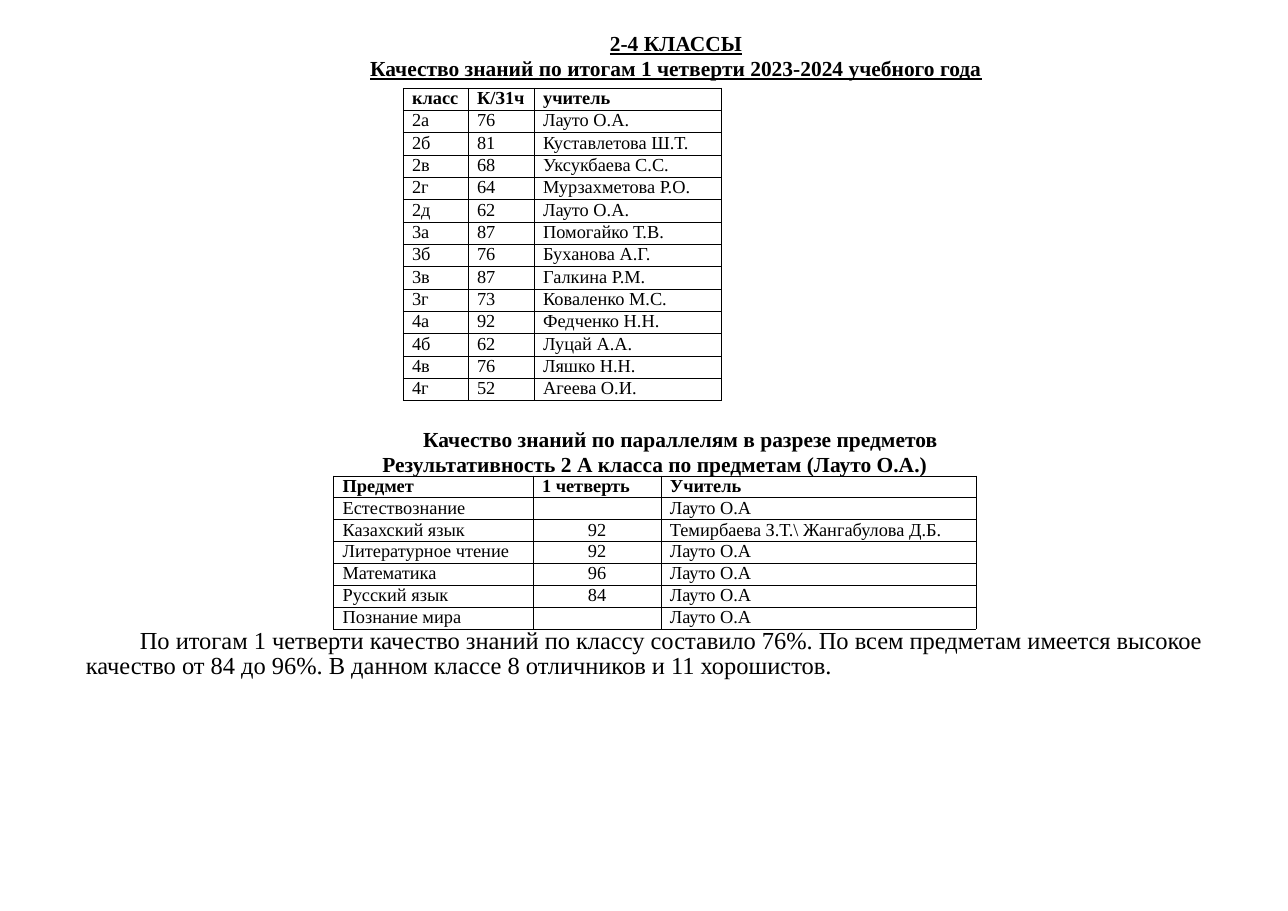
"""Build a slide with school grade quality results for classes 2-4."""
import pptx
import pptx.dml.color
import pptx.enum.text
import pptx.oxml
import pptx.oxml.ns
import pptx.util

Inches, Pt = pptx.util.Inches, pptx.util.Pt
ALIGN = pptx.enum.text.PP_ALIGN
BLACK = pptx.dml.color.RGBColor(0x00, 0x00, 0x00)
FONT = "Times New Roman"
BORDER = (
    '<a:{} {} w="6350"><a:solidFill><a:srgbClr val="{}"/></a:solidFill></a:{}>'
)


def write(p, text, size, spacing, bold=False):
    p.text = text
    p.line_spacing = Pt(spacing)
    p.font.name, p.font.size, p.font.bold = FONT, Pt(size), bold
    p.font.color.rgb = BLACK


def add_grid(s, left, top, height, widths, rows, centred=()):
    frame = s.shapes.add_table(
        len(rows), len(widths), Inches(left), Inches(top),
        Inches(sum(widths)), Inches(height))
    table = frame.table
    table.first_row = table.horz_banding = False
    for col, width in zip(table.columns, widths):
        col.width = Inches(width)
    for i, row in enumerate(rows):
        table.rows[i].height = Inches(height / len(rows))
        for j, text in enumerate(row):
            cell = table.cell(i, j)
            is_centred = i > 0 and j in centred
            cell.margin_left = Inches(0 if is_centred else 0.08)
            cell.margin_right = cell.margin_top = cell.margin_bottom = 0
            p = cell.text_frame.paragraphs[0]
            write(p, text, 12, 13.4, bold=i == 0)
            p.alignment = ALIGN.CENTER if is_centred else ALIGN.LEFT
            tcPr = cell._tc.get_or_add_tcPr()
            for side in ("lnL", "lnR", "lnT", "lnB"):
                tcPr.append(pptx.oxml.parse_xml(BORDER.format(
                    side, pptx.oxml.ns.nsdecls("a"), BLACK, side)))
            cell.fill.background()


prs = pptx.Presentation()
prs.slide_width, prs.slide_height = Inches(11.69), Inches(8.27)
s = prs.slides.add_slide(prs.slide_layouts[5])

title = s.shapes.title
title.left, title.top = Inches(3.34), Inches(0.27)
title.width, title.height = Inches(5.59), Inches(0.48)
tf = title.text_frame
tf.auto_size = pptx.enum.text.MSO_AUTO_SIZE.NONE
tf.vertical_anchor = pptx.enum.text.MSO_ANCHOR.TOP
tf.margin_left = tf.margin_right = tf.margin_bottom = 0
tf.margin_top = Inches(0.01)
tf.word_wrap = True
tf.add_paragraph()
title_lines = [
    "2-4 КЛАССЫ",
    "Качество знаний по итогам 1 четверти 2023-2024 учебного года",
]
for p, text in zip(tf.paragraphs, title_lines):
    write(p, text, 14, 16.4, bold=True)
    p.font.underline = True
    p.alignment = ALIGN.CENTER
    p.space_before = Pt(0)
tf.paragraphs[0].space_before = Pt(0.9)

class_rows = [
    ("класс", "К/З1ч", "учитель"),
    ("2а", "76", "Лауто О.А."),
    ("2б", "81", "Куставлетова Ш.Т."),
    ("2в", "68", "Уксукбаева С.С."),
    ("2г", "64", "Мурзахметова Р.О."),
    ("2д", "62", "Лауто О.А."),
    ("3а", "87", "Помогайко Т.В."),
    ("3б", "76", "Буханова А.Г."),
    ("3в", "87", "Галкина Р.М."),
    ("3г", "73", "Коваленко М.С."),
    ("4а", "92", "Федченко Н.Н."),
    ("4б", "62", "Луцай А.А."),
    ("4в", "76", "Ляшко Н.Н."),
    ("4г", "52", "Агеева О.И."),
]
add_grid(s, 3.66, 0.8, 2.84, (0.59, 0.6, 1.7), class_rows)

subject_rows = [
    ("Предмет", "1 четверть", "Учитель"),
    ("Естествознание", "", "Лауто О.А"),
    ("Казахский язык", "92", "Темирбаева З.Т.\\ Жангабулова Д.Б."),
    ("Литературное чтение", "92", "Лауто О.А"),
    ("Математика", "96", "Лауто О.А"),
    ("Русский язык", "84", "Лауто О.А"),
    ("Познание мира", "", "Лауто О.А"),
]
add_grid(s, 3.03, 4.32, 1.39, (1.81, 1.16, 2.86), subject_rows, centred=(1,))

notes = [
    (3.46, 3.85, 5.08, 0.37, 14, True,
     "Качество знаний по параллелям в разрезе предметов "
     "Результативность 2 А класса по предметам (Лауто О.А.)"),
    (0.77, 5.69, 10.34, 0.49, 16, False,
     "По итогам 1 четверти качество знаний по классу составило 76%. "
     "По всем предметам имеется высокое качество от 84 до 96%. "
     "В данном классе 8 отличников и 11 хорошистов."),
]
for left, top, width, indent, size, bold, text in notes:
    box = s.shapes.add_textbox(
        Inches(left), Inches(top), Inches(width), Inches(0.48))
    tf = box.text_frame
    tf.word_wrap = True
    tf.margin_left = tf.margin_right = tf.margin_bottom = 0
    tf.margin_top = Inches(0.03)
    p = tf.paragraphs[0]
    write(p, text, size, 16.1, bold)
    p.space_before = Pt(2)
    pPr = p._p.get_or_add_pPr()
    pPr.set("marL", str(Inches(0.01)))
    pPr.set("indent", str(Inches(indent)))

prs.save("out.pptx")
